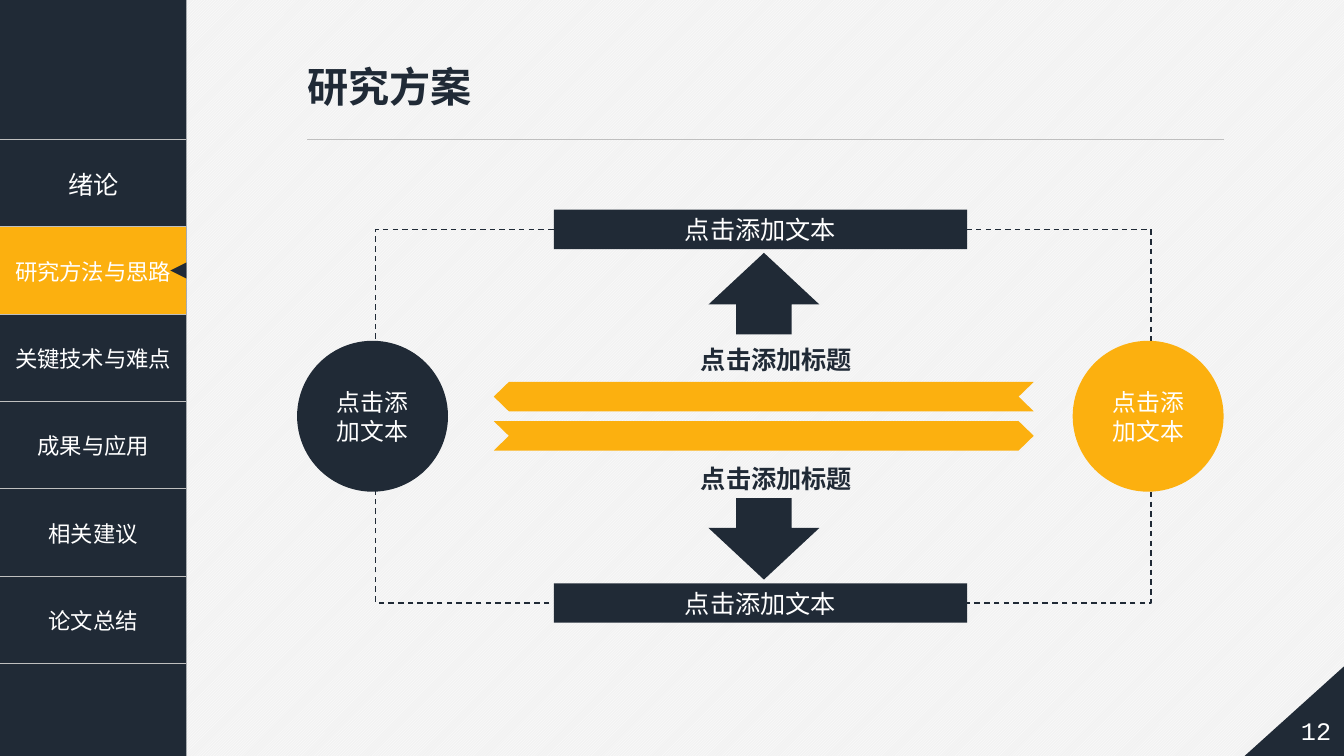
from lxml import etree
from pptx import Presentation
from pptx.dml.color import RGBColor
from pptx.enum.dml import MSO_LINE, MSO_PATTERN
from pptx.enum.shapes import MSO_CONNECTOR, MSO_SHAPE as SHAPE
from pptx.enum.text import MSO_ANCHOR as ANCHOR, PP_ALIGN as ALIGN
from pptx.oxml.ns import qn
from pptx.util import Pt

NAVY, AMBER, WHITE, GREY, RULE = "202A36", "FCB00F", "FFFFFF", "F2F2F2", "BFBFBF"
CJK = "Noto Sans CJK SC"
CHAPTERS = ["绪论", "研究方法与思路", "关键技术与难点", "成果与应用", "相关建议", "论文总结"]
CURRENT = 1


def rgb(color):
    """Turn a hex string into a colour."""
    return RGBColor.from_string(color)


def write(tf, text, size, color=WHITE, font=CJK, bold=False, align=ALIGN.CENTER):
    """Set one paragraph of text and format its run."""
    tf.text = text
    p = tf.paragraphs[0]
    p.alignment = align
    r = p.runs[0]
    r.font.size, r.font.bold, r.font.name = Pt(size), bold, font
    r.font.color.rgb = rgb(color)
    etree.SubElement(r._r.get_or_add_rPr(), qn("a:ea")).set("typeface", CJK)


def set_margins(tf, side, end):
    """Set the four insets of a text frame."""
    tf.margin_left = tf.margin_right = Pt(side)
    tf.margin_top = tf.margin_bottom = Pt(end)


def paint(sp, fill):
    """Give a shape a flat fill without line or shadow."""
    sp.shadow.inherit = False
    sp.fill.solid()
    sp.fill.fore_color.rgb = rgb(fill)
    sp.line.fill.background()


def add_block(s, kind, x, y, w, h, fill, text="", size=18):
    """Add a filled preset shape with optional centred text."""
    sp = s.shapes.add_shape(kind, Pt(x), Pt(y), Pt(w), Pt(h))
    paint(sp, fill)
    if text:
        tf = sp.text_frame
        set_margins(tf, 5.7, 2.9)
        tf.vertical_anchor = ANCHOR.MIDDLE
        write(tf, text, size)
    return sp


def add_label(s, x, y, w, h, text, **style):
    """Add a one-line text box."""
    tf = s.shapes.add_textbox(Pt(x), Pt(y), Pt(w), Pt(h)).text_frame
    set_margins(tf, 0, 0)
    tf.word_wrap = False
    tf.vertical_anchor = ANCHOR.MIDDLE
    write(tf, text, 18, **style)


def add_outline(s, points, fill):
    """Add a closed polygon through points."""
    start, *rest = [(Pt(x), Pt(y)) for x, y in points]
    builder = s.shapes.build_freeform(*start, scale=1.0)
    builder.add_line_segments(rest, close=True)
    paint(builder.convert_to_shape(), fill)


def set_borders(cell):
    """Rule a cell above and below only."""
    tc_pr = cell._tc.get_or_add_tcPr()
    for side in "LRTB":
        ln = etree.SubElement(tc_pr, qn(f"a:ln{side}"), w=str(Pt(1)))
        if side in "LR":
            etree.SubElement(ln, qn("a:noFill"))
        else:
            fill = etree.SubElement(ln, qn("a:solidFill"))
            etree.SubElement(fill, qn("a:srgbClr"), val=RULE)


def add_sidebar(s, x, y, w, h):
    """Draw the chapter navigation with the current chapter marked."""
    add_block(s, SHAPE.RECTANGLE, x, y, w, h, NAVY)
    top, row, marker = y + 99.6, 62.4, 11.5
    table = s.shapes.add_table(len(CHAPTERS), 1, Pt(x), Pt(top), Pt(w),
                               Pt(row * len(CHAPTERS))).table
    for i, chapter in enumerate(CHAPTERS):
        cell = table.cell(i, 0)
        set_borders(cell)
        cell.fill.solid()
        cell.fill.fore_color.rgb = rgb(AMBER if i == CURRENT else NAVY)
        cell.vertical_anchor = ANCHOR.MIDDLE
        write(cell.text_frame, chapter, 16 if i else 18)
    pointer = add_block(s, SHAPE.ISOSCELES_TRIANGLE, x + w - marker,
                        top + (CURRENT + 0.5) * row - marker / 2, marker, marker, NAVY)
    pointer.rotation = 270


def add_title(s, x, y, w, h):
    """Place the title with a thin rule along the bottom of its box."""
    title = s.shapes.title
    title.left, title.top, title.width, title.height = Pt(x), Pt(y), Pt(w), Pt(43)
    tf = title.text_frame
    set_margins(tf, 0, 3.6)
    tf.vertical_anchor = ANCHOR.MIDDLE
    write(tf, "研究方案", 29.4, NAVY, "Arial", True, ALIGN.LEFT)
    rule = s.shapes.add_connector(MSO_CONNECTOR.STRAIGHT, Pt(x), Pt(y + h), Pt(x + w), Pt(y + h))
    rule.line.color.rgb = rgb(RULE)
    rule.line.width = Pt(0.5)
    etree.SubElement(rule._element.spPr, qn("a:effectLst"))


def add_ribbon(s, x, y, w, h, leftward):
    """Draw a band with a pointed head and a notched tail."""
    notch = 10.8
    points = [(0, 0), (w - notch, 0), (w, h / 2), (w - notch, h), (0, h), (notch, h / 2)]
    add_outline(s, [(x + (w - dx if leftward else dx), y + dy) for dx, dy in points], AMBER)


def add_diagram(s, x, y, w, h):
    """Draw two circles joined by a dashed frame around paired arrows."""
    mid, bar_h, circle = y + h / 2, 28.2, 107.8
    frame = add_block(s, SHAPE.RECTANGLE, x + 56.2, y + bar_h / 2, 553.7, h - bar_h, NAVY)
    frame.fill.background()
    frame.line.color.rgb = rgb(NAVY)
    frame.line.width = Pt(1)
    frame.line.dash_style = MSO_LINE.DASH
    for left, fill in ((x, NAVY), (x + w - circle, AMBER)):
        add_block(s, SHAPE.OVAL, left, mid - circle / 2, circle, circle, fill, "点击添加文本", 17)
    for top in (y, y + h - bar_h):
        add_block(s, SHAPE.RECTANGLE, x + 183.5, top, 295.2, bar_h, NAVY, "点击添加文本")
    for top in (mid - 54.3, mid + 30.7):
        add_label(s, x + 282, top, 121, 28, "点击添加标题", color=NAVY, bold=True)
    for kind, top in ((SHAPE.UP_ARROW, y + 30.8), (SHAPE.DOWN_ARROW, y + h - 30.8 - 58.2)):
        arrow = add_block(s, kind, x + 293.9, top, 79.2, 58.2, NAVY)
        arrow.adjustments[1] = 0.634
    for top, leftward in ((mid - 24.5, True), (mid + 3.5, False)):
        add_ribbon(s, x + 140.5, top, 385.7, 21, leftward)


def add_page_corner(s, x, y, w, h):
    """Fill the bottom right corner and set the page number in it."""
    add_outline(s, [(x, y + h), (x + w, y), (x + w, y + h)], NAVY)
    add_label(s, x + w - 40, y + h - 36, 40, 36, "12", font="Courier New")


def main():
    """Build and save the slide."""
    prs = Presentation()
    prs.slide_width, prs.slide_height = Pt(960), Pt(540)
    s = prs.slides.add_slide(prs.slide_layouts[5])
    fill = s.background.fill
    fill.patterned()
    fill.pattern = MSO_PATTERN.LIGHT_UPWARD_DIAGONAL
    fill.fore_color.rgb, fill.back_color.rgb = rgb(WHITE), rgb(GREY)
    add_sidebar(s, 0, 0, 133.2, 540)
    add_title(s, 219.6, 40.3, 654.6, 59.3)
    add_diagram(s, 212.2, 149.8, 661.8, 295)
    add_page_corner(s, 889, 476, 71, 64)
    prs.save("out.pptx")


if __name__ == "__main__":
    main()
